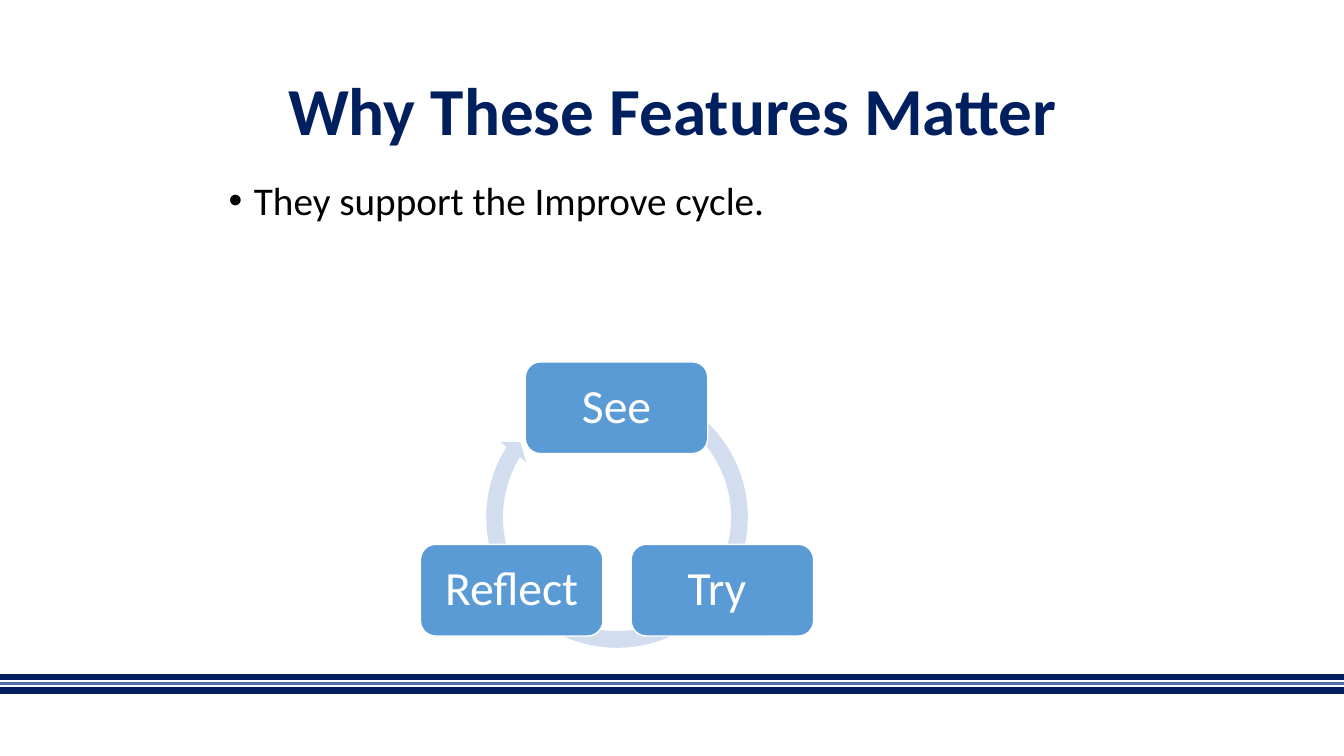
from lxml import etree
from pptx import Presentation
from pptx.dml.color import RGBColor
from pptx.enum.shapes import MSO_CONNECTOR, MSO_SHAPE
from pptx.enum.text import MSO_ANCHOR, PP_ALIGN
from pptx.oxml.ns import qn
from pptx.util import Emu, Pt

STRAIGHT = MSO_CONNECTOR.STRAIGHT
CIRCULAR_ARROW = MSO_SHAPE.CIRCULAR_ARROW
ROUNDED = MSO_SHAPE.ROUNDED_RECTANGLE
MIDDLE, TOP = MSO_ANCHOR.MIDDLE, MSO_ANCHOR.TOP
CENTER, LEFT = PP_ALIGN.CENTER, PP_ALIGN.LEFT

EMU_PER_PX = 9144
SLIDE_WIDTH, SLIDE_HEIGHT = 1333, 750
NAVY, SLATE, BLUE, PALE_BLUE = "001F5F", "5070A7", "5B9BD5", "D2DEEF"
WHITE, BLACK = "FFFFFF", "000000"

FOOTER_RULES = [(672, NAVY, 4.5), (678, SLATE, 2.25), (685, NAVY, 4.5)]
STEP_SIZE = (181, 91)
STEPS = [("See", 521, 359), ("Try ", 626, 540), ("Reflect", 417, 540)]
ARROW_ADJUSTMENTS = [0.06, 3.4, 127.23, 180.59, 0.06]


def px(value):
    return Emu(value * EMU_PER_PX)


def color(hex_value):
    return RGBColor.from_string(hex_value)


def write_text(shape, text, size, text_color, bold=False, align=LEFT,
               anchor=TOP, inset=None, bullet=False):
    frame = shape.text_frame
    frame.word_wrap = True
    frame.vertical_anchor = anchor
    if inset is not None:
        frame.margin_left = frame.margin_right = px(inset)
        frame.margin_top = frame.margin_bottom = px(inset)
    frame.text = text
    paragraph = frame.paragraphs[0]
    paragraph.alignment = align
    paragraph.line_spacing = 0.9
    if bullet:
        add_bullet(paragraph, 25)
    font = paragraph.runs[0].font
    font.name, font.size, font.bold = "Calibri", Pt(size), bold
    font.color.rgb = color(text_color)


def add_bullet(paragraph, indent):
    properties = paragraph._p.get_or_add_pPr()
    properties.set("marL", str(px(indent)))
    properties.set("indent", str(px(-indent)))
    bullet_font = etree.SubElement(properties, qn("a:buFont"))
    bullet_font.set("typeface", "Arial")
    etree.SubElement(properties, qn("a:buChar")).set("char", "•")


def add_rule(slide, y, line_color, width):
    """Draw a horizontal line across the whole slide."""
    rule = slide.shapes.add_connector(
        STRAIGHT, px(0), px(y), px(SLIDE_WIDTH), px(y))
    rule.line.color.rgb = color(line_color)
    rule.line.width = Pt(width)
    etree.SubElement(rule._element.spPr, qn("a:effectLst"))


def add_filled_shape(slide, kind, left, top, width, height, fill):
    shape = slide.shapes.add_shape(
        kind, px(left), px(top), px(width), px(height))
    shape.shadow.inherit = False
    shape.fill.solid()
    shape.fill.fore_color.rgb = color(fill)
    shape.line.fill.background()
    return shape


def add_cycle_arrow(slide):
    arrow = add_filled_shape(
        slide, CIRCULAR_ARROW, 474, 375, 276, 276, PALE_BLUE)
    for index, value in enumerate(ARROW_ADJUSTMENTS):
        arrow.adjustments[index] = value


def add_step(slide, label, left, top):
    step = add_filled_shape(slide, ROUNDED, left, top, *STEP_SIZE, BLUE)
    step.line.color.rgb = color(WHITE)
    step.line.width = Pt(1)
    write_text(step, label, 34, WHITE, align=CENTER, anchor=MIDDLE, inset=14)


def add_title(slide, text):
    title = slide.shapes.title
    title.left, title.top = px(92), px(40)
    title.width, title.height = px(1150), px(145)
    write_text(title, text, 48, NAVY, bold=True, align=CENTER, anchor=MIDDLE)


def main():
    presentation = Presentation()
    presentation.slide_width = px(SLIDE_WIDTH)
    presentation.slide_height = px(SLIDE_HEIGHT)
    title_only = presentation.slide_layouts.get_by_name("Title Only")
    slide = presentation.slides.add_slide(title_only)

    for y, line_color, width in FOOTER_RULES:
        add_rule(slide, y, line_color, width)
    add_title(slide, "Why These Features Matter")
    body = slide.shapes.add_textbox(px(217), px(175), px(900), px(495))
    write_text(body, "They support the Improve cycle.", 28, BLACK, bullet=True)

    add_cycle_arrow(slide)
    for label, left, top in STEPS:
        add_step(slide, label, left, top)

    presentation.save("out.pptx")


if __name__ == "__main__":
    main()
